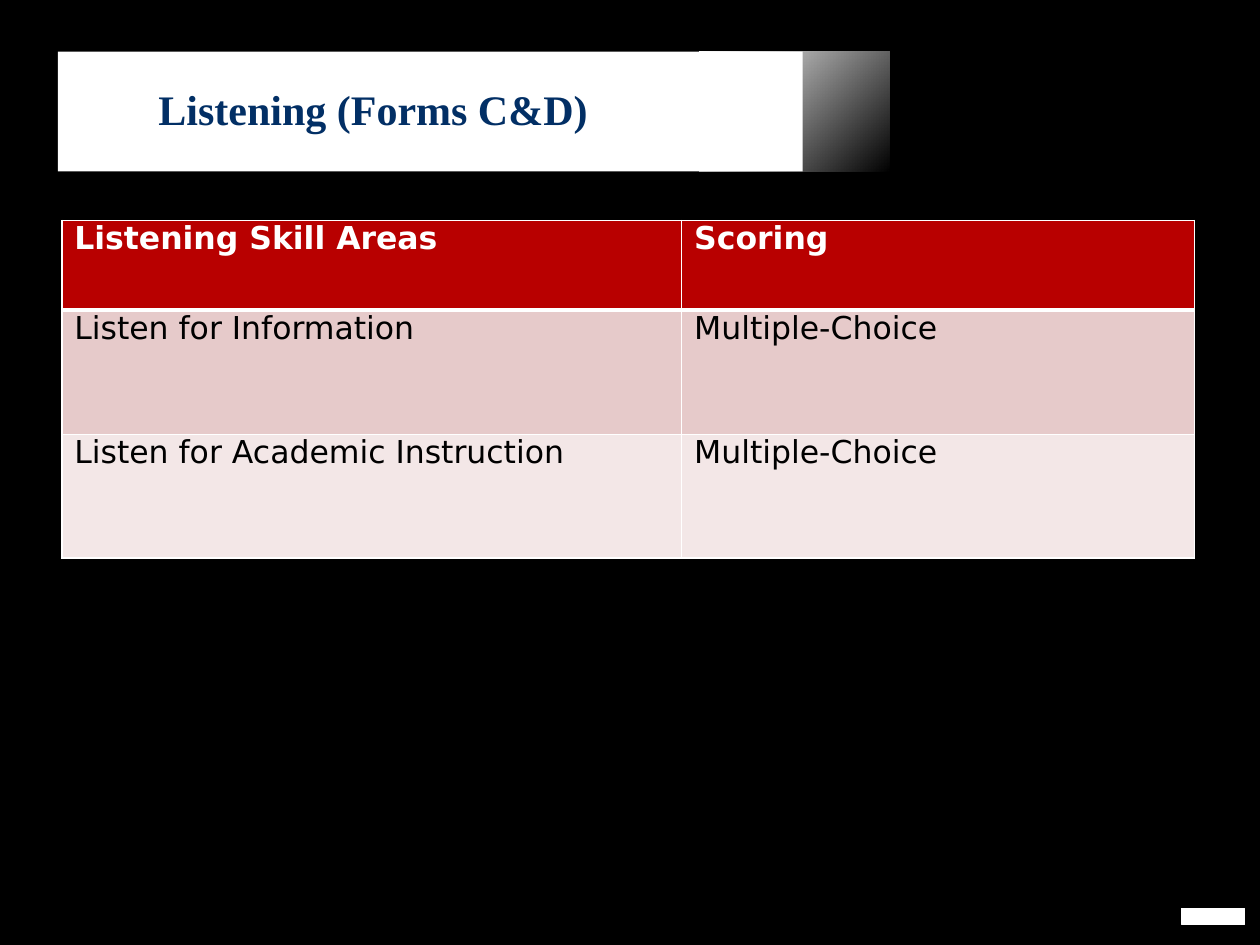
from lxml.etree import SubElement
from pptx import Presentation
from pptx.dml.color import RGBColor
from pptx.enum.shapes import MSO_SHAPE
from pptx.enum.text import MSO_ANCHOR
from pptx.oxml.ns import qn
from pptx.util import Inches, Pt

BLACK = RGBColor(0x00, 0x00, 0x00)
WHITE = RGBColor(0xFF, 0xFF, 0xFF)
NAVY = RGBColor(0x02, 0x2F, 0x65)
RED = RGBColor(0xB8, 0x00, 0x00)
ROSE = RGBColor(0xE6, 0xCA, 0xCA)
PALE_ROSE = RGBColor(0xF3, 0xE7, 0xE7)

COLUMN_WIDTHS = [4.92, 4.07]
ROW_HEIGHTS = [0.71, 0.99, 0.98]
ROW_FILLS = [RED, ROSE, PALE_ROSE]
ROWS = [
    ["Listening Skill Areas", "Scoring"],
    ["Listen for Information", "Multiple-Choice"],
    ["Listen for Academic Instruction", "Multiple-Choice"],
]


def add_panel(page, left, top, width, height):
    panel = page.shapes.add_shape(
        MSO_SHAPE.RECTANGLE, Inches(left), Inches(top), Inches(width), Inches(height))
    panel.shadow.inherit = False
    panel.fill.solid()
    panel.fill.fore_color.rgb = WHITE
    panel.line.fill.background()
    return panel


def fade_out(panel):
    """Fade the panel from white to clear, from top left to bottom right."""
    panel.fill.gradient()
    panel.fill.gradient_angle = 315
    for stop in panel.fill.gradient_stops:
        stop.color.rgb = WHITE
    last_color = panel.fill._fill._gradFill.findall(".//" + qn("a:srgbClr"))[-1]
    SubElement(last_color, qn("a:alpha"), val="0")


def style_text(frame, size, font_name, color, bold):
    font = frame.paragraphs[0].font
    font.size = Pt(size)
    font.name = font_name
    font.color.rgb = color
    font.bold = bold


def add_title(page, text):
    box = page.shapes.add_textbox(Inches(1.16), Inches(0.53), Inches(7.03), Inches(0.66))
    frame = box.text_frame
    frame.word_wrap = True
    frame.vertical_anchor = MSO_ANCHOR.MIDDLE
    frame.text = text
    style_text(frame, 24, "Times New Roman", NAVY, True)


def set_borders(cell, **widths):
    properties = cell._tc.get_or_add_tcPr()
    for side in "LRTB":
        line = SubElement(properties, qn("a:ln" + side), w=str(Pt(widths.get(side, 1))))
        fill = SubElement(line, qn("a:solidFill"))
        SubElement(fill, qn("a:srgbClr"), val=str(WHITE))


def fill_cell(cell, text, color, is_header, widths):
    cell.margin_left = Inches(0.1)
    cell.margin_right = cell.margin_top = cell.margin_bottom = 0
    set_borders(cell, **widths)
    cell.fill.solid()
    cell.fill.fore_color.rgb = color
    cell.text = text
    style_text(cell.text_frame, 18, "DejaVu Sans", WHITE if is_header else BLACK, is_header)


def add_skill_table(page):
    table = page.shapes.add_table(
        len(ROWS), len(COLUMN_WIDTHS), Inches(0.49), Inches(1.75),
        Inches(sum(COLUMN_WIDTHS)), Inches(sum(ROW_HEIGHTS))).table
    for column, width in zip(table.columns, COLUMN_WIDTHS):
        column.width = Inches(width)
    border_widths = [{"B": 3}, {"T": 3}, {}]
    for index, (row, texts) in enumerate(zip(table.rows, ROWS)):
        row.height = Inches(ROW_HEIGHTS[index])
        for cell, text in zip(row.cells, texts):
            fill_cell(cell, text, ROW_FILLS[index], index == 0, border_widths[index])


def main():
    deck = Presentation()
    deck.slide_width, deck.slide_height = Inches(10), Inches(7.5)
    page = deck.slides.add_slide(deck.slide_layouts[6])
    page.background.fill.solid()
    page.background.fill.fore_color.rgb = BLACK

    fade_out(add_panel(page, 5.55, 0.41, 1.51, 0.95))
    add_panel(page, 0.46, 0.41, 5.91, 0.95)
    number_patch = add_panel(page, 9.38, 7.21, 0.5, 0.13)
    number_patch.line.color.rgb = WHITE
    number_patch.line.width = Pt(0.75)
    add_title(page, "Listening (Forms C&D)")
    add_skill_table(page)
    deck.save("out.pptx")


if __name__ == "__main__":
    main()
